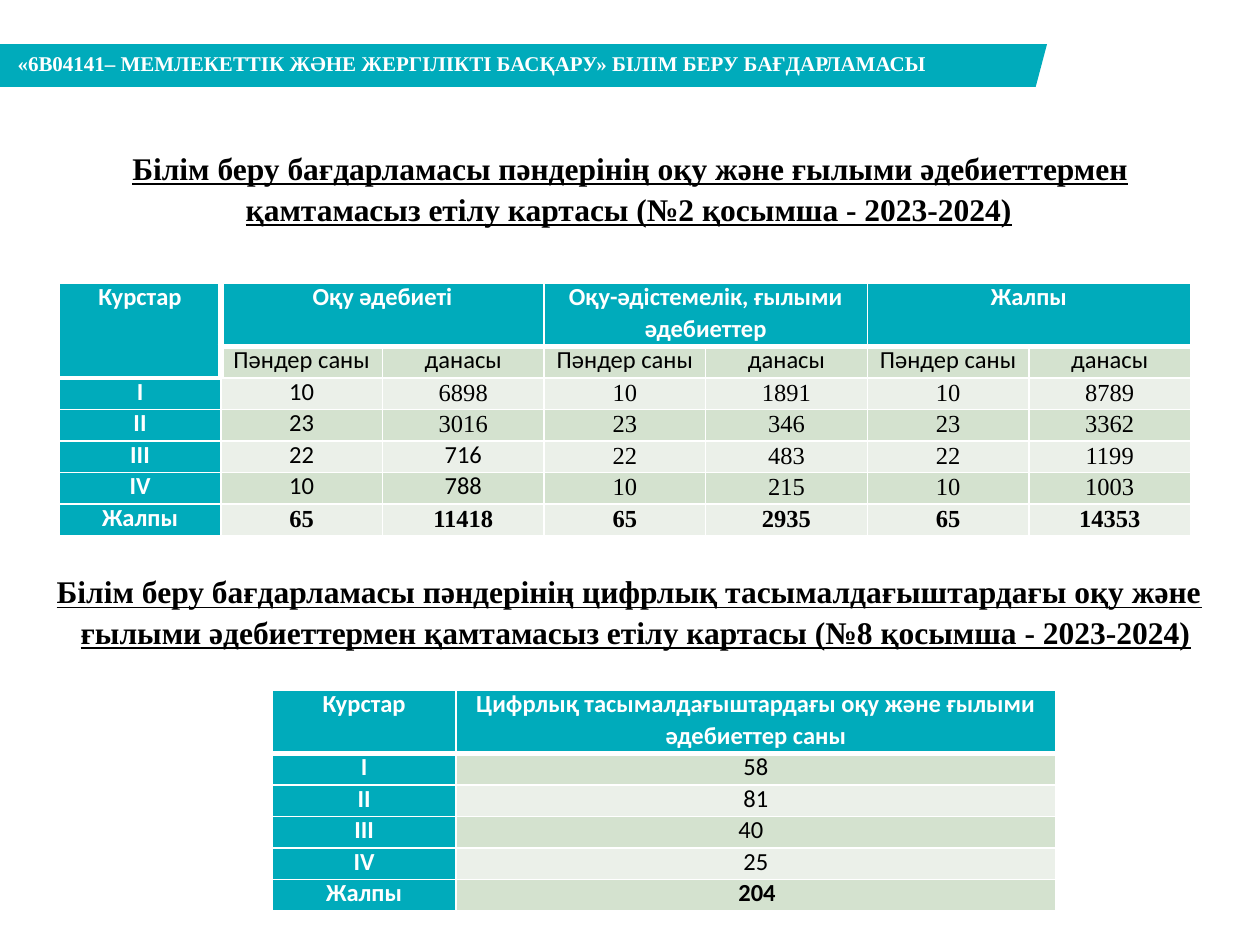
from dataclasses import dataclass

from lxml import etree
from pptx import Presentation
from pptx.dml.color import RGBColor
from pptx.enum.text import MSO_ANCHOR, PP_ALIGN
from pptx.oxml.ns import qn
from pptx.util import Inches, Pt

CENTER, LEFT, TOP = PP_ALIGN.CENTER, PP_ALIGN.LEFT, MSO_ANCHOR.TOP


@dataclass(frozen=True)
class Theme:
    teal: RGBColor = RGBColor(0x00, 0xAB, 0xBB)
    green: RGBColor = RGBColor(0xD4, 0xE2, 0xCF)
    pale: RGBColor = RGBColor(0xEB, 0xF0, 0xE9)
    white: RGBColor = RGBColor(0xFF, 0xFF, 0xFF)
    black: RGBColor = RGBColor(0, 0, 0)
    serif: str = "Times New Roman"
    sans: str = "Calibri"
    band: Pt = Pt(12)
    heading: Pt = Pt(18)
    cell: Pt = Pt(14)
    cell_line: Pt = Pt(16.4)


THEME = Theme()
THIN, HEADER_RULE, COURSE_RULE = 1, 3, 4.25

COVERAGE_GROUPS = ["Оқу әдебиеті", "Оқу-әдістемелік, ғылыми\nәдебиеттер", "Жалпы"]
COVERAGE_MEASURES = ["Пәндер саны", "данасы"]
COVERAGE_ROWS = [
    ("I", "10", "6898", "10", "1891", "10", "8789"),
    ("II", "23", "3016", "23", "346", "23", "3362"),
    ("III", "22", "716", "22", "483", "22", "1199"),
    ("IV", "10", "788", "10", "215", "10", "1003"),
    ("Жалпы", "65", "11418", "65", "2935", "65", "14353"),
]
SANS_COUNTS = {"716", "788"}
# Course, count, left indent of the count
DIGITAL_ROWS = [("I", "58", 2.28), ("II", "81", 2.28), ("III", "40", 2.24),
                ("IV", "25", 2.28), ("Жалпы", "204", 2.24)]


def set_font(paragraph, name, size, color, bold):
    font = paragraph.font
    font.name, font.size, font.bold = name, size, bold
    font.color.rgb = color


def set_indent(paragraph, left, first=0):
    properties = paragraph._p.get_or_add_pPr()
    properties.set("marL", str(Inches(left)))
    properties.set("indent", str(Inches(first)))


def add_text(slide, box, text, size, color, inset_top=0.01):
    frame = slide.shapes.add_textbox(*map(Inches, box)).text_frame
    frame.word_wrap = True
    frame.margin_left = frame.margin_right = frame.margin_bottom = 0
    frame.margin_top = Inches(inset_top)
    paragraph = frame.paragraphs[0]
    paragraph.text = text
    set_font(paragraph, THEME.serif, size, color, True)
    return paragraph


def add_program_band(slide, left, top, width, height):
    slant = 0.09
    outline = slide.shapes.build_freeform(Inches(left + width), Inches(top))
    outline.add_line_segments([
        (Inches(left), Inches(top)),
        (Inches(left), Inches(top + height)),
        (Inches(left + width - slant), Inches(top + height)),
    ])
    band = outline.convert_to_shape()
    band.shadow.inherit = False
    band.fill.solid()
    band.fill.fore_color.rgb = THEME.teal
    band.line.fill.background()
    label = add_text(
        slide, (left + 0.13, top + 0.04, 7.6, 0.23),
        "«6В04141– МЕМЛЕКЕТТІК ЖӘНЕ ЖЕРГІЛІКТІ БАСҚАРУ» БІЛІМ БЕРУ БАҒДАРЛАМАСЫ",
        THEME.band, THEME.white)
    set_indent(label, 0.01)


def add_heading(slide, box, text, left, first, inset_top=0.01):
    heading = add_text(slide, box, text, THEME.heading, THEME.black, inset_top)
    set_indent(heading, left, first)
    heading.line_spacing = 1.08
    heading.font.underline = True


def add_borders(cell, **widths):
    properties = cell._tc.get_or_add_tcPr()
    for side in "LRTB":
        width = Pt(widths.get(side, THIN))
        line = etree.SubElement(properties, qn(f"a:ln{side}"), w=str(width))
        fill = etree.SubElement(line, qn("a:solidFill"))
        etree.SubElement(fill, qn("a:srgbClr"), val=str(THEME.white))


def fill_cell(cell, text, fill, color=THEME.black, bold=False,
              font=THEME.sans, indent=None, **borders):
    add_borders(cell, **borders)
    cell.fill.solid()
    cell.fill.fore_color.rgb = fill
    cell.margin_left = cell.margin_right = 0
    cell.margin_top = cell.margin_bottom = 0
    cell.vertical_anchor = TOP
    cell.text = text
    for index, paragraph in enumerate(cell.text_frame.paragraphs):
        paragraph.alignment = CENTER if indent is None else LEFT
        if indent is not None:
            set_indent(paragraph, indent)
        if index == 0:
            paragraph.line_spacing = THEME.cell_line
        else:
            paragraph.space_before = Pt(1.2)
        set_font(paragraph, font, THEME.cell, color, bold)


def fill_header(cell, text, **borders):
    fill_cell(cell, text, THEME.teal, THEME.white, True, **borders)


def add_grid(slide, left, top, widths, heights):
    table = slide.shapes.add_table(
        len(heights), len(widths), Inches(left), Inches(top),
        Inches(sum(widths)), Inches(sum(heights))).table
    for column, width in zip(table.columns, widths):
        column.width = Inches(width)
    for row, height in zip(table.rows, heights):
        row.height = Inches(height)
    return table


def add_coverage_table(slide, left, top, width):
    table = add_grid(slide, left, top, [width / 7] * 7, [0.5] + [0.25] * 6)
    # Two-level header
    for row in range(2):
        fill_header(table.cell(row, 0), "" if row else "Курстар",
                    R=COURSE_RULE, B=HEADER_RULE)
    table.cell(0, 0).merge(table.cell(1, 0))
    for column in range(1, 7):
        group, measure = divmod(column - 1, 2)
        edge = COURSE_RULE if column == 1 else THIN
        fill_header(table.cell(0, column), "" if measure else COVERAGE_GROUPS[group],
                    L=edge, B=HEADER_RULE)
        fill_cell(table.cell(1, column), COVERAGE_MEASURES[measure], THEME.green,
                  L=edge, T=HEADER_RULE)
        if measure:
            table.cell(0, column - 1).merge(table.cell(0, column))
    # Courses and total
    for row, (course, *counts) in enumerate(COVERAGE_ROWS, 2):
        total = row == len(COVERAGE_ROWS) + 1
        fill_header(table.cell(row, 0), course, T=HEADER_RULE if row == 2 else THIN)
        for column, count in enumerate(counts, 1):
            sans = not total and (column == 1 or count in SANS_COUNTS)
            fill_cell(table.cell(row, column), count,
                      THEME.green if row % 2 else THEME.pale, bold=total,
                      font=THEME.sans if sans else THEME.serif)


def add_digital_table(slide, left, top, widths):
    table = add_grid(slide, left, top, widths, [0.5] + [0.25] * 5)
    titles = ["Курстар", "Цифрлық тасымалдағыштардағы оқу және ғылыми\nәдебиеттер саны"]
    for column, title in enumerate(titles):
        fill_header(table.cell(0, column), title, B=HEADER_RULE)
    for row, (course, count, indent) in enumerate(DIGITAL_ROWS, 1):
        rule = HEADER_RULE if row == 1 else THIN
        fill_header(table.cell(row, 0), course, T=rule)
        fill_cell(table.cell(row, 1), count, THEME.green if row % 2 else THEME.pale,
                  bold=row == len(DIGITAL_ROWS), indent=indent, T=rule)


def main():
    deck = Presentation()
    deck.slide_width, deck.slide_height = Inches(10), Inches(7.5)
    slide = deck.slides.add_slide(deck.slide_layouts[6])
    add_program_band(slide, 0, 0.35, 8.31, 0.34)
    # Printed literature
    add_heading(slide, (0.97, 0.89, 8.06, 0.93),
                "Білім беру бағдарламасы пәндерінің оқу және ғылыми әдебиеттермен "
                "қамтамасыз етілу картасы (№2 қосымша - 2023-2024)",
                0.98, -0.9, inset_top=0.27)
    add_coverage_table(slide, 0.47, 2.25, 8.98)
    # Digital literature
    add_heading(slide, (0.44, 4.51, 9.11, 0.68),
                "Білім беру бағдарламасы пәндерінің цифрлық тасымалдағыштардағы оқу және "
                "ғылыми әдебиеттермен қамтамасыз етілу картасы (№8 қосымша - 2023-2024)",
                0.2, -0.19)
    add_digital_table(slide, 2.16, 5.48, [1.46, 4.76])
    deck.save("out.pptx")


if __name__ == "__main__":
    main()
